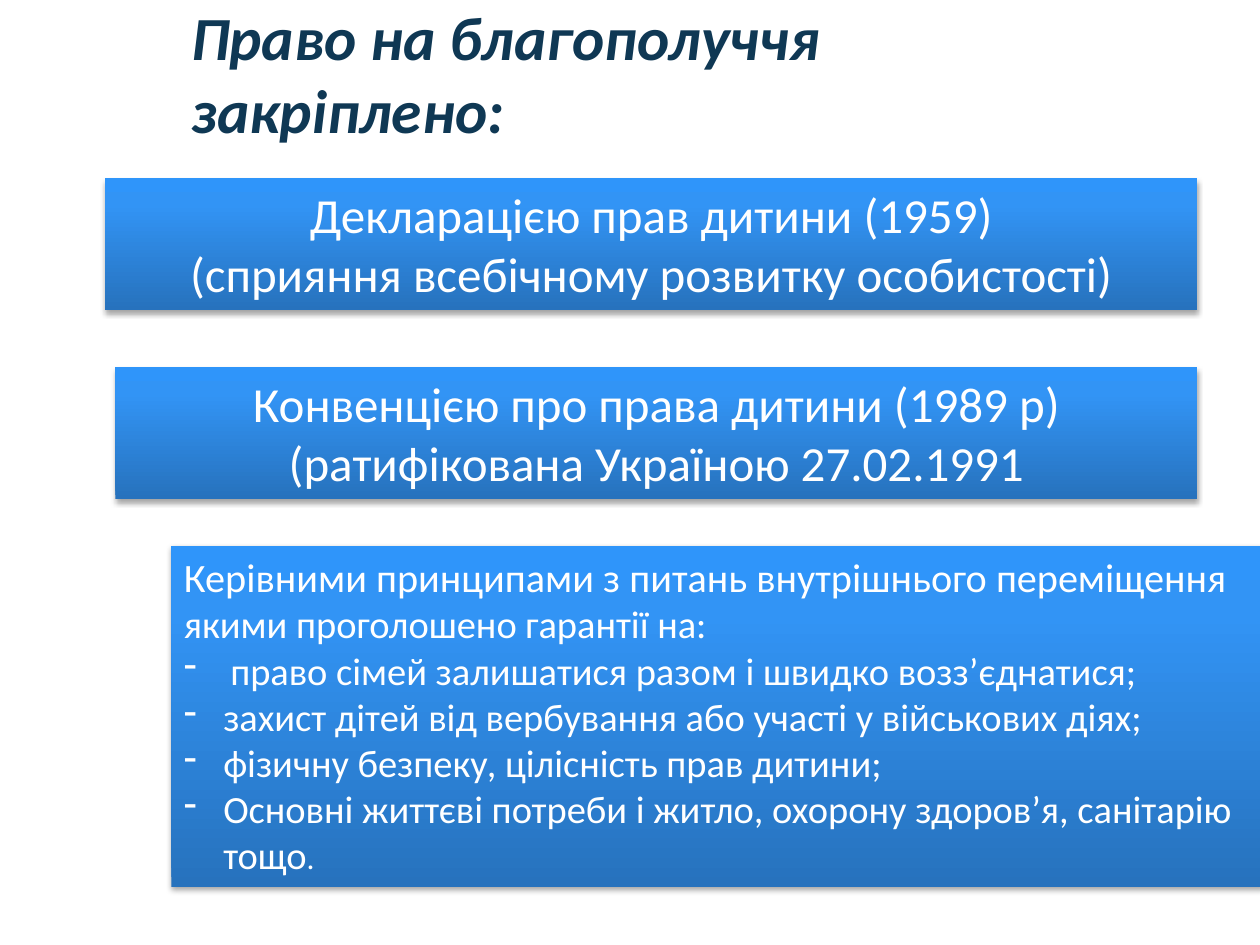
from lxml import etree
from pptx import Presentation
from pptx.dml.color import RGBColor
from pptx.enum.shapes import MSO_SHAPE
from pptx.enum.text import MSO_ANCHOR, PP_ALIGN
from pptx.oxml import parse_xml
from pptx.oxml.ns import qn
from pptx.util import Pt

RECTANGLE = MSO_SHAPE.RECTANGLE
TOP, MIDDLE = MSO_ANCHOR.TOP, MSO_ANCHOR.MIDDLE
LEFT, CENTER = PP_ALIGN.LEFT, PP_ALIGN.CENTER
NAVY = RGBColor(0x0F, 0x38, 0x54)
WHITE = RGBColor(0xFF, 0xFF, 0xFF)
GRADIENT = [
    (0, RGBColor(0x27, 0x72, 0xBD)),
    (80, RGBColor(0x32, 0x94, 0xF5)),
    (100, RGBColor(0x2F, 0x95, 0xFA)),
]
FONT = "Calibri"
NAMESPACE = 'xmlns:a="http://schemas.openxmlformats.org/drawingml/2006/main"'

TITLE = "Право на благополуччя закріплено:"
TITLE_AREA = (102, 16.5, 527, 50)

# Each panel: area, alignment, lines of (text pieces with sizes, bullet indent)
PANELS = [
    ((60, 102, 624, 75), CENTER, [
        ([("Декларацією прав дитини (1959)", 28)], 0),
        ([("(сприяння всебічному розвитку особистості)", 28)], 0),
    ]),
    ((66, 210, 618, 75), CENTER, [
        ([("Конвенцією про права дитини (1989 р)", 28)], 0),
        ([("(ратифікована Україною 27.02.1991", 28)], 0),
    ]),
    ((98, 312, 624, 195), LEFT, [
        ([("Керівними принципами з питань внутрішнього переміщення", 23)], 0),
        ([("якими проголошено гарантії на:", 22)], 0),
        ([("право сімей залишатися разом і швидко возз’єднатися;", 22)], 26.5),
        ([("захист дітей від вербування або участі у військових діях;", 22)], 22.5),
        ([("фізичну безпеку, цілісність прав дитини;", 22)], 22.5),
        ([("Основні життєві потреби і житло, охорону здоров’я, санітарію тощо", 22),
          (".", 18)], 22.5),
    ]),
]


def style_panel(shape):
    shape.line.fill.background()
    shape.shadow.inherit = False
    properties = shape.fill._xPr
    stops = "".join(
        f'<a:gs pos="{place * 1000}"><a:srgbClr val="{color}"/></a:gs>'
        for place, color in GRADIENT
    )
    properties.find(qn("a:prstGeom")).addnext(parse_xml(
        f'<a:gradFill {NAMESPACE} rotWithShape="1"><a:gsLst>{stops}</a:gsLst>'
        '<a:lin ang="16200000" scaled="0"/></a:gradFill>'
    ))
    properties.find(qn("a:effectLst")).append(parse_xml(
        f'<a:outerShdw {NAMESPACE} blurRad="{Pt(3.1)}" dist="{Pt(1.8)}" '
        'dir="5400000" rotWithShape="0"><a:srgbClr val="000000">'
        '<a:alpha val="35000"/></a:srgbClr></a:outerShdw>'
    ))


def add_bullet(para, indent):
    settings = para._p.get_or_add_pPr()
    settings.set("marL", str(Pt(indent)))
    settings.set("indent", str(-Pt(indent)))
    etree.SubElement(settings, qn("a:buChar")).set("char", "-")


def add_panel(page, area, alignment, lines):
    panel = page.shapes.add_shape(RECTANGLE, *map(Pt, area))
    style_panel(panel)
    frame = panel.text_frame
    frame.word_wrap = True
    frame.vertical_anchor = TOP
    for number, (pieces, indent) in enumerate(lines):
        para = frame.add_paragraph() if number else frame.paragraphs[0]
        para.alignment = alignment
        if indent:
            add_bullet(para, indent)
        para.font.name = FONT
        para.font.color.rgb = WHITE
        para.font.size = Pt(pieces[0][1])
        for text, size in pieces:
            span = para.add_run()
            span.text = text
            if size != pieces[0][1]:
                span.font.size = Pt(size)


def add_title(page):
    title = page.shapes.title
    title.left, title.top, title.width, title.height = map(Pt, TITLE_AREA)
    frame = title.text_frame
    frame.text = TITLE
    frame.word_wrap = False
    frame.vertical_anchor = MIDDLE
    para = frame.paragraphs[0]
    para.alignment = LEFT
    para.font.name = FONT
    para.font.size = Pt(35)
    para.font.bold = para.font.italic = True
    para.font.color.rgb = NAVY


deck = Presentation()
deck.slide_width, deck.slide_height = Pt(720), Pt(540)
page = deck.slides.add_slide(deck.slide_layouts[5])
add_title(page)
for area, alignment, lines in PANELS:
    add_panel(page, area, alignment, lines)
deck.save("out.pptx")
